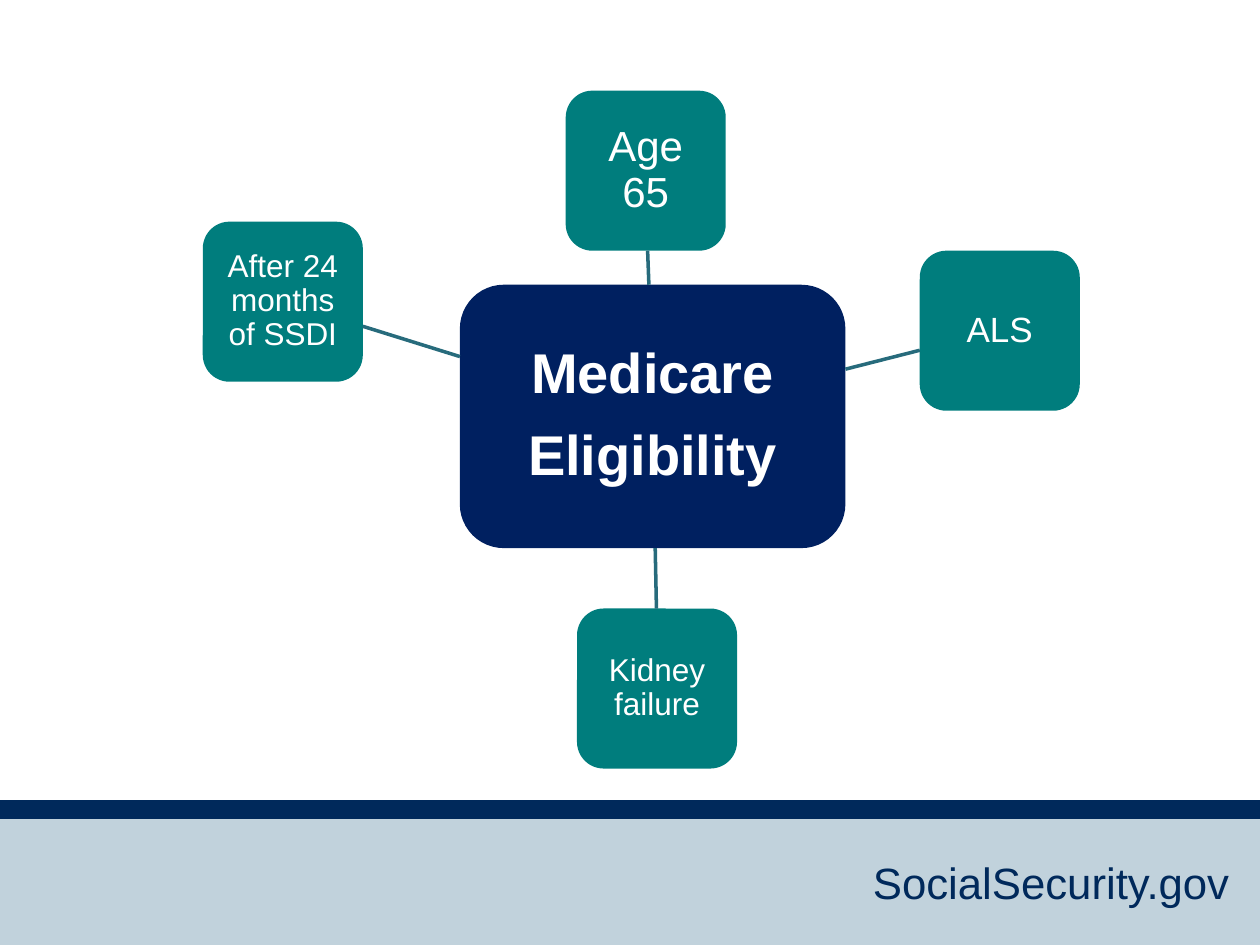
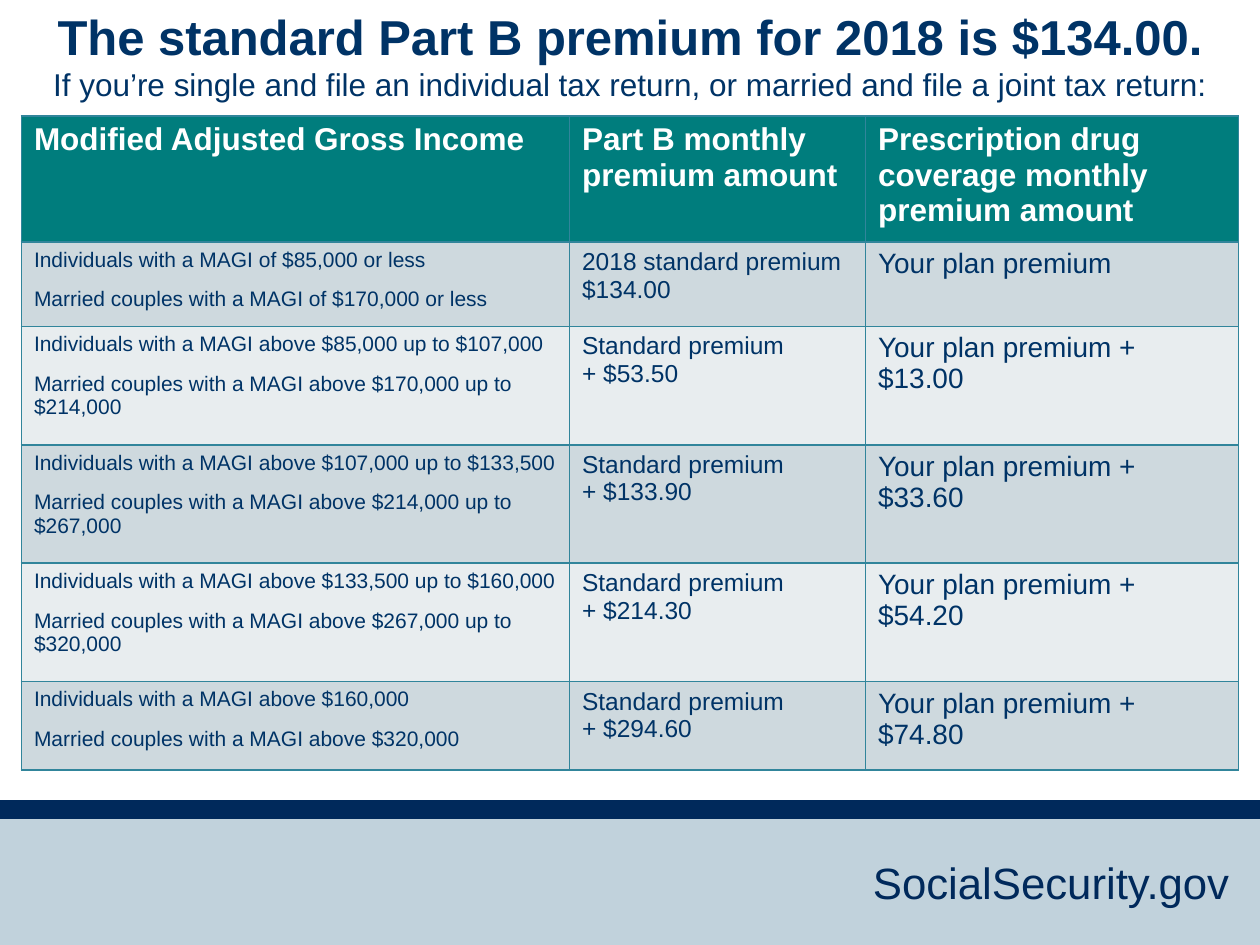
from dataclasses import dataclass

from lxml import etree
from pptx import Presentation
from pptx.dml.color import RGBColor
from pptx.enum import shapes, text
from pptx.oxml import ns
from pptx.util import Inches, Pt


@dataclass(frozen=True)
class Theme:
    font: str = "Arial"
    white: str = "FFFFFF"
    band: str = "C1D2DC"
    stripe: str = "00295B"
    hub: str = "002060"
    teal: str = "007D7D"
    spoke: str = "276B7C"
    ink: str = "003366"
    border: str = "31859B"
    row_fills: tuple = ("CED9DE", "E8EDEF")
    title_size: int = 28
    subtitle_size: int = 18
    footer_size: int = 25
    hub_size: int = 32
    header_size: int = 18
    column_sizes: tuple = (12, 14, 16)


theme = Theme()


def write(frame, lines, align=text.PP_ALIGN.LEFT, gap=0, spacing=None):
    """Fill a text frame with (words, size, colour, bold) lines, one paragraph each."""
    frame.word_wrap = True
    for index, (words, size, color, bold) in enumerate(lines):
        paragraph = frame.add_paragraph() if index else frame.paragraphs[0]
        paragraph.alignment = align
        if spacing:
            paragraph.line_spacing = spacing
        if index and gap:
            paragraph.space_before = Pt(gap)
        run = paragraph.add_run()
        run.text = words
        run.font.name = theme.font
        run.font.size = Pt(size)
        run.font.bold = bold
        run.font.color.rgb = RGBColor.from_string(color)


def add_block(slide, kind, left, top, width, height, fill):
    shape = slide.shapes.add_shape(
        kind, Inches(left), Inches(top), Inches(width), Inches(height))
    shape.shadow.inherit = False
    shape.fill.solid()
    shape.fill.fore_color.rgb = RGBColor.from_string(fill)
    shape.line.fill.background()
    return shape


presentation = Presentation()
presentation.slide_width, presentation.slide_height = Inches(10), Inches(7.5)
TITLE_ONLY, BLANK = 5, 6
eligibility = presentation.slides.add_slide(presentation.slide_layouts[BLANK])
premiums = presentation.slides.add_slide(presentation.slide_layouts[TITLE_ONLY])

# Footer shared by both slides
for slide in (eligibility, premiums):
    rectangle = shapes.MSO_SHAPE.RECTANGLE
    add_block(slide, rectangle, 0, 6.45, 10, 1.05, theme.band)
    add_block(slide, rectangle, 0, 6.35, 10, 0.15, theme.stripe)
    footer = slide.shapes.add_textbox(Inches(6.83), Inches(6.74), Inches(3.07), Inches(0.52))
    write(footer.text_frame,
          [("SocialSecurity.gov", theme.footer_size, theme.stripe, False)])

# Slide 1: hub and its four routes to eligibility
rounded = shapes.MSO_SHAPE.ROUNDED_RECTANGLE
nodes = [  # lines, left, top, width, height, fill, size, inset
    (["Medicare", "Eligibility"], 3.65, 2.26, 3.06, 2.09, theme.hub, theme.hub_size, 0.09),
    (["Age 65"], 4.49, 0.72, 1.27, 1.27, theme.teal, 24, 0.07),
    (["ALS"], 7.3, 1.99, 1.27, 1.27, theme.teal, 20, 0.06),
    (["Kidney failure"], 4.58, 4.83, 1.27, 1.27, theme.teal, 18, 0.05),
    (["After 24 months of SSDI"], 1.61, 1.76, 1.27, 1.27, theme.teal, 18, 0.05),
]
for lines, left, top, width, height, fill, size, inset in nodes:
    node = add_block(eligibility, rounded, left, top, width, height, fill)
    frame = node.text_frame
    frame.margin_left = frame.margin_right = Inches(inset)
    frame.margin_top = frame.margin_bottom = Inches(inset)
    frame.vertical_anchor = text.MSO_ANCHOR.MIDDLE
    is_hub = fill == theme.hub
    write(frame, [(line, size, theme.white, is_hub) for line in lines],
          text.PP_ALIGN.CENTER, gap=12.5, spacing=0.9)

# Spokes from the hub's edge to each route
spokes = [
    (5.15, 2.26, 5.14, 1.99),
    (6.71, 2.93, 7.3, 2.78),
    (5.2, 4.35, 5.21, 4.83),
    (3.65, 2.83, 2.88, 2.59),
]
for ends in spokes:
    spoke = eligibility.shapes.add_connector(
        shapes.MSO_CONNECTOR.STRAIGHT, *[Inches(value) for value in ends])
    spoke.line.color.rgb = RGBColor.from_string(theme.spoke)
    spoke.line.width = Pt(2)
    etree.SubElement(spoke.element.spPr, ns.qn("a:effectLst"))

# Slide 2: title with its explanatory line
title = premiums.shapes.title
title.left, title.top, title.width, title.height = 0, 0, Inches(10), Inches(0.88)
title.text_frame.auto_size = text.MSO_AUTO_SIZE.NONE
title.text_frame.vertical_anchor = text.MSO_ANCHOR.TOP
write(title.text_frame, [
    ("The standard Part B premium for 2018 is $134.00.", theme.title_size, theme.ink, True),
    ("If you’re single and file an individual tax return, or married and file a joint "
     "tax return:", theme.subtitle_size, theme.ink, False),
], text.PP_ALIGN.CENTER)

# Premium table: income limits, Part B premium, drug plan premium
headers = [
    "Modified Adjusted Gross Income",
    "Part B monthly premium amount",
    "Prescription drug coverage monthly premium amount",
]
brackets = [  # individual range, couple range, Part B lines, drug premium
    ("of $85,000 or less", "of $170,000 or less",
     ["2018 standard premium", "$134.00"], "Your plan premium"),
    ("above $85,000 up to $107,000", "above $170,000 up to $214,000",
     ["Standard premium", "+ $53.50"], "Your plan premium + $13.00"),
    ("above $107,000 up to $133,500", "above $214,000 up to $267,000",
     ["Standard premium", "+ $133.90"], "Your plan premium + $33.60"),
    ("above $133,500 up to $160,000", "above $267,000 up to $320,000",
     ["Standard premium", "+ $214.30"], "Your plan premium + $54.20"),
    ("above $160,000", "above $320,000",
     ["Standard premium", "+ $294.60"], "Your plan premium + $74.80"),
]
rows = [[[header] for header in headers]]
for individual, couple, part_b, drug_plan in brackets:
    incomes = [f"Individuals with a MAGI {individual}",
               f"Married couples with a MAGI {couple}"]
    rows.append([incomes, part_b, [drug_plan]])

column_widths = [4.35, 2.35, 2.96]
row_heights = [1, 0.67, 0.94, 0.94, 0.94, 0.7]
table = premiums.shapes.add_table(
    len(rows), len(headers), Inches(0.17), Inches(0.92),
    Inches(sum(column_widths)), Inches(sum(row_heights))).table
for column, width in zip(table.columns, column_widths):
    column.width = Inches(width)
for row, height in zip(table.rows, row_heights):
    row.height = Inches(height)

for row_index, row in enumerate(rows):
    is_header = row_index == 0
    fill = theme.teal if is_header else theme.row_fills[(row_index - 1) % 2]
    color = theme.white if is_header else theme.ink
    for column_index, lines in enumerate(row):
        cell = table.cell(row_index, column_index)
        cell.fill.solid()
        cell.fill.fore_color.rgb = RGBColor.from_string(fill)
        size = theme.header_size if is_header else theme.column_sizes[column_index]
        write(cell.text_frame, [(line, size, color, is_header) for line in lines],
              gap=9.2 if column_index == 0 else 0)
        # Thin border on all four sides, placed ahead of the fill
        properties = cell._tc.get_or_add_tcPr()
        for position, side in enumerate(("lnL", "lnR", "lnT", "lnB")):
            border = etree.Element(ns.qn(f"a:{side}"), w=str(Pt(1)))
            solid = etree.SubElement(border, ns.qn("a:solidFill"))
            etree.SubElement(solid, ns.qn("a:srgbClr"), val=theme.border)
            properties.insert(position, border)

presentation.save("out.pptx")
